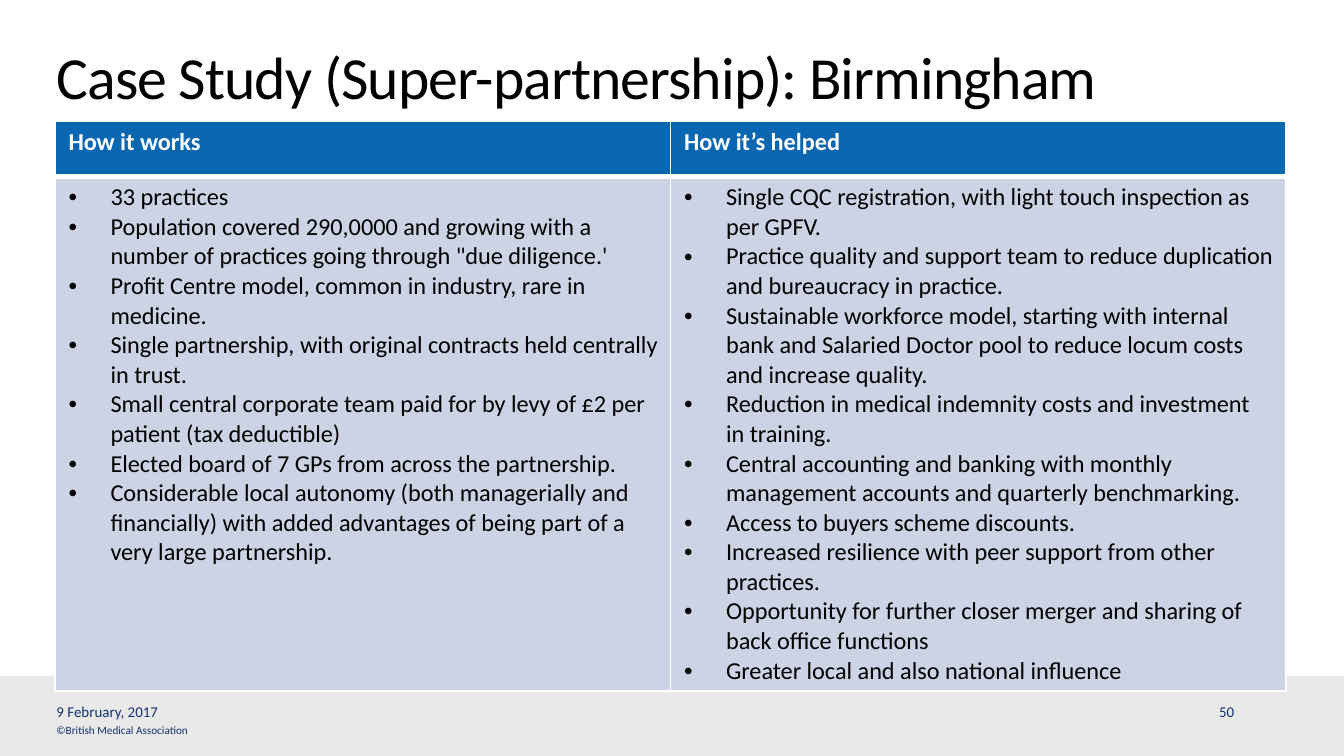
from pptx import Presentation
from pptx.dml.color import RGBColor as RGB
from pptx.enum.shapes import MSO_SHAPE as Shape
from pptx.enum.text import MSO_ANCHOR as Anchor
from pptx.oxml.ns import qn
from pptx.util import Inches, Pt
from lxml.etree import SubElement

SLIDE_WIDTH = Inches(10)
SLIDE_HEIGHT = SLIDE_WIDTH * 9 // 16
BULLET_INDENT = Inches(5) // 16

WHITE = RGB(0xFF, 0xFF, 0xFF)
BLACK = RGB(0x00, 0x00, 0x00)
NAVY = RGB(0x13, 0x31, 0x6E)
HEADER_BLUE = RGB(0x09, 0x67, 0xB1)
BODY_BLUE = RGB(0xCC, 0xD3, 0xE4)
FOOTER_GREY = RGB(0xE9, 0xE9, 0xE9)

TITLE_FONT = {"name": "Calibri", "size": Pt(32)}
HEADER_FONT = {"name": "Calibri", "size": Pt(13), "bold": True}
BODY_FONT = {"name": "Calibri", "size": Pt(13), "bold": False}
DATE_FONT = {"name": "Calibri", "size": Pt(8)}
COPYRIGHT_FONT = {"name": "Calibri", "size": Pt(6)}

HEADER_BORDERS = {"lnL": 1, "lnR": 1, "lnT": 1, "lnB": 3}
BODY_BORDERS = {"lnL": 1, "lnR": 1, "lnT": 3, "lnB": 1}

COLUMNS = {
    "How it works": [
        "33 practices",
        "Population covered 290,0000 and growing with a number of practices "
        "going through \"due diligence.'",
        "Profit Centre model, common in industry, rare in medicine.",
        "Single partnership, with original contracts held centrally in trust.",
        "Small central corporate team paid for by levy of £2 per patient (tax deductible)",
        "Elected board of 7 GPs from across the partnership.",
        "Considerable local autonomy (both managerially and financially) with "
        "added advantages of being part of a very large partnership.",
    ],
    "How it’s helped": [
        "Single CQC registration, with light touch inspection as per GPFV.",
        "Practice quality and support team to reduce duplication and bureaucracy in practice.",
        "Sustainable workforce model, starting with internal bank and Salaried "
        "Doctor pool to reduce locum costs and increase quality.",
        "Reduction in medical indemnity costs and investment in training.",
        "Central accounting and banking with monthly management accounts and "
        "quarterly benchmarking.",
        "Access to buyers scheme discounts.",
        "Increased resilience with peer support from other practices.",
        "Opportunity for further closer merger and sharing of back office functions",
        "Greater local and also national influence",
    ],
}


def add_run(paragraph, text, font, color):
    run = paragraph.add_run()
    run.text = text
    for attribute, value in font.items():
        setattr(run.font, attribute, value)
    run.font.color.rgb = color
    return run


def add_label(slide, box, text, font, color, anchor=Anchor.MIDDLE):
    frame = slide.shapes.add_textbox(*map(Inches, box)).text_frame
    layout = {"margin_left": 0, "margin_top": 0, "margin_right": 0, "margin_bottom": 0,
              "word_wrap": True, "vertical_anchor": anchor}
    for attribute, value in layout.items():
        setattr(frame, attribute, value)
    paragraph = frame.paragraphs[0]
    return paragraph, add_run(paragraph, text, font, color)


def add_title(slide, text):
    paragraph, run = add_label(slide, (0.42, 0.36, 8.65, 0.54), text,
                               TITLE_FONT, BLACK, Anchor.TOP)
    paragraph.line_spacing = Pt(34)
    run.font._element.set("spc", "-50")


def add_footer_band(slide):
    top = Inches(5.03)
    band = slide.shapes.add_shape(Shape.RECTANGLE, 0, top, SLIDE_WIDTH, SLIDE_HEIGHT - top)
    band.shadow.inherit = False
    band.fill.solid()
    band.fill.fore_color.rgb = FOOTER_GREY
    band.line.fill.background()


def style_cell(cell, color, borders):
    properties = cell._tc.get_or_add_tcPr()
    for side, points in borders.items():
        border = SubElement(properties, qn(f"a:{side}"), w=str(Pt(points)))
        fill = SubElement(border, qn("a:solidFill"))
        SubElement(fill, qn("a:srgbClr"), val=str(WHITE))
    cell.fill.solid()
    cell.fill.fore_color.rgb = color


def add_bullet(paragraph):
    properties = paragraph._p.get_or_add_pPr()
    properties.set("marL", str(BULLET_INDENT))
    properties.set("indent", str(-BULLET_INDENT))
    SubElement(properties, qn("a:buFont"), typeface="Arial")
    SubElement(properties, qn("a:buChar"), char="•")


def fill_bullets(cell, points):
    frame = cell.text_frame
    for index, point in enumerate(points):
        paragraph = frame.add_paragraph() if index else frame.paragraphs[0]
        add_bullet(paragraph)
        add_run(paragraph, point, BODY_FONT, BLACK)


def add_comparison(slide):
    box = map(Inches, (0.41, 0.9, 9.16, 4.24))
    table = slide.shapes.add_table(2, len(COLUMNS), *box).table
    for row, height in zip(table.rows, (0.41, 3.83)):
        row.height = Inches(height)
    for column, (heading, points) in enumerate(COLUMNS.items()):
        header, body = table.cell(0, column), table.cell(1, column)
        style_cell(header, HEADER_BLUE, HEADER_BORDERS)
        style_cell(body, BODY_BLUE, BODY_BORDERS)
        add_run(header.text_frame.paragraphs[0], heading, HEADER_FONT, WHITE)
        fill_bullets(body, points)


def main():
    deck = Presentation()
    deck.slide_width, deck.slide_height = SLIDE_WIDTH, SLIDE_HEIGHT
    slide = deck.slides.add_slide(deck.slide_layouts[6])
    add_footer_band(slide)
    add_label(slide, (0.42, 5.38, 2.07, 0.1), "©British Medical Association",
              COPYRIGHT_FONT, NAVY)
    add_title(slide, "Case Study (Super-partnership): Birmingham")
    add_label(slide, (0.42, 5.23, 3.17, 0.13), "9 February, 2017", DATE_FONT, NAVY)
    add_label(slide, (9.07, 5.23, 0.28, 0.13), "50", DATE_FONT, NAVY)
    add_comparison(slide)
    deck.save("out.pptx")


if __name__ == "__main__":
    main()
